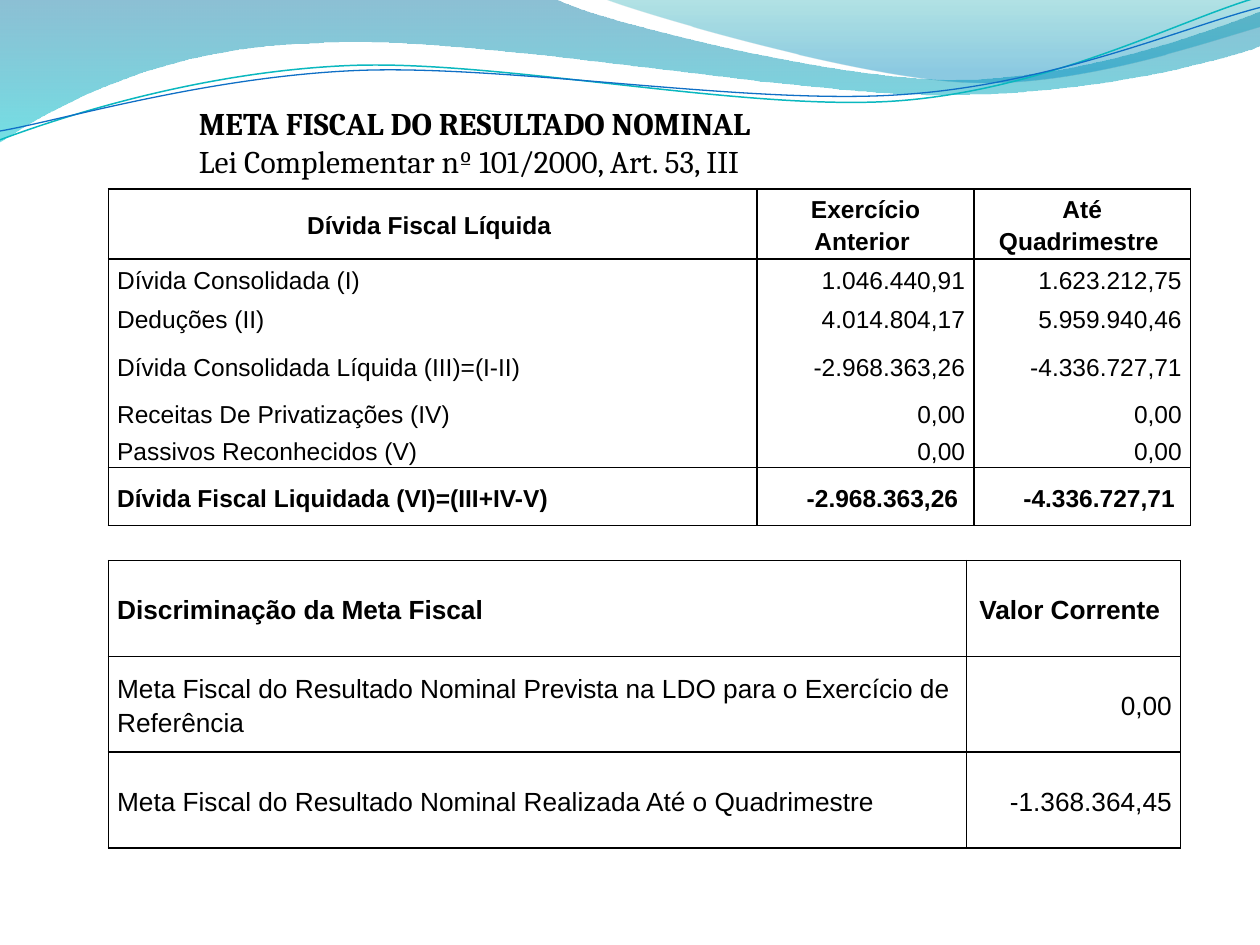
"""Build the slide on the nominal result fiscal target."""
from math import cos, radians, sin

from lxml import etree
from pptx import Presentation
from pptx.dml.color import RGBColor
from pptx.enum.text import MSO_ANCHOR, PP_ALIGN
from pptx.oxml.ns import qn
from pptx.util import Pt

LEFT, MID, RIGHT = PP_ALIGN.LEFT, PP_ALIGN.CENTER, PP_ALIGN.RIGHT
BLACK = RGBColor(0, 0, 0)
BLUE, CYAN = RGBColor(0x00, 0x74, 0xA1), RGBColor(0x00, 0xC6, 0xCF)
TEAL, SKY = RGBColor(0x00, 0xA1, 0xA9), RGBColor(0x00, 0x8B, 0xBF)
AQUA, NAVY = RGBColor(0x0A, 0xB8, 0xBF), RGBColor(0x0F, 0x6F, 0xC6)
PLAIN = "{2D5ABB26-0587-4C30-8999-92F81FD0307C}"
TILT = 2.7

deck = Presentation()
deck.slide_width, deck.slide_height = 9144000, 6858000
UNIT = deck.slide_width // 10
slide = deck.slides.add_slide(deck.slide_layouts[6])
shapes = slide.shapes


def trace(parts, close, tilt=0, hub=(0, 0)):
    """Draw an outline from points (2 numbers) and curves (6 numbers)."""
    turn = radians(tilt)
    dots = []
    for part in parts:
        for x, y in zip(part[::2], part[1::2]):
            x, y = x - hub[0], y - hub[1]
            dots.append((int((hub[0] + x * cos(turn) - y * sin(turn)) * UNIT),
                         int((hub[1] + x * sin(turn) + y * cos(turn)) * UNIT)))
    pen = shapes.build_freeform(*dots[0], scale=1.0)
    pen.add_line_segments(dots[1:], close=close)
    shape = pen.convert_to_shape()
    shape.shadow.inherit = False
    shape.rotation = -tilt
    lines = iter(list(shape._element.iter(qn("a:lnTo"))))
    for part in parts[1:]:
        first = next(lines)
        if len(part) == 6:
            curve = etree.Element(qn("a:cubicBezTo"))
            first.addprevious(curve)
            for line in (first, next(lines), next(lines)):
                curve.append(line[0])
                line.getparent().remove(line)
    return shape


def style(para, text, align, looks):
    """Fill a paragraph with one formatted run."""
    para.alignment = align
    run = para.add_run()
    run.text = text
    run.font.color.rgb = BLACK
    for key, value in looks.items():
        setattr(run.font, key, value)


waves = [
    ([(0, 0), (4.4, -0.01), (4.76, 0.17, 6.64, 0.63, 7.58, 0.63),
      (8.53, 0.63, 9.58, 0.26, 10, 0.09), (10.01, 0.36),
      (9.83, 0.44, 8.7, 0.76, 7.46, 0.75), (6.22, 0.75, 3.82, 0.28, 2.57, 0.34),
      (1.29, 0.36, 0.46, 0.83, -0.01, 1.13), (0, 0)],
     [(0, BLUE, 45), (1, CYAN, 55)]),
    ([(4.79, -0.01), (5.09, 0.11, 6.82, 0.62, 7.69, 0.65),
      (8.56, 0.69, 9.61, 0.32, 10, 0.21), (10, 0), (4.79, -0.01)],
     [(0, TEAL, 30), (0.8, SKY, 45)]),
]
for parts, stops in waves:
    wave = trace(parts, True)
    wave.line.fill.background()
    wave.fill.gradient()
    wave.fill.gradient_angle = 270
    for stop, (place, color, alpha) in zip(wave.fill.gradient_stops, stops):
        stop.position = place
        stop.color.rgb = color
    tints = wave._element.spPr.iter(qn("a:srgbClr"))
    for tint, (place, color, alpha) in zip(tints, stops):
        etree.SubElement(tint, qn("a:alpha"), val=str(alpha * 1000))

threads = [
    ([(0, 1.11), (0.48, 0.93, 1.58, 0.57, 2.77, 0.52),
      (3.95, 0.47, 5.93, 0.89, 7.13, 0.8), (8.33, 0.71, 9.38, 0.15, 9.98, -0.02)],
     (4.99, 0.58), AQUA, 0.85),
    ([(0, 1.04), (0.47, 0.96, 1.64, 0.61, 2.83, 0.56),
      (4.03, 0.51, 5.97, 0.84, 7.17, 0.75), (8.36, 0.67, 9.41, 0.21, 10, 0.06)],
     (5, 0.59), NAVY, 0.75),
]
for parts, hub, color, width in threads:
    thread = trace(parts, False, TILT, hub)
    thread.fill.background()
    thread.line.color.rgb = color
    thread.line.width = Pt(width)

box = [int(n * UNIT) for n in (1.48, 0.78, 6.72, 0.71)]
frame = shapes.add_textbox(*box).text_frame
frame.word_wrap = True
titles = "META FISCAL DO RESULTADO NOMINAL", "Lei Complementar nº 101/2000, Art. 53, III"
for para, text, bold in zip((frame.paragraphs[0], frame.add_paragraph()), titles, (True, False)):
    style(para, text, LEFT, {"name": "Cambria", "size": Pt(18), "bold": bold})

debt = [
    ("Dívida Fiscal Líquida ", "Exercício Anterior ", "Até Quadrimestre "),
    ("Dívida Consolidada (I)", "1.046.440,91", "1.623.212,75"),
    ("Deduções (II)", "4.014.804,17", "5.959.940,46"),
    ("Dívida Consolidada Líquida (III)=(I-II)", "-2.968.363,26", "-4.336.727,71"),
    ("Receitas De Privatizações (IV)", "0,00", "0,00"),
    ("Passivos Reconhecidos (V)", "0,00", "0,00"),
    ("Dívida Fiscal Liquidada (VI)=(III+IV-V)", "-2.968.363,26 ", "-4.336.727,71 "),
]
goal = [
    ("Discriminação da Meta Fiscal", "Valor Corrente "),
    ("Meta Fiscal do Resultado Nominal Prevista na LDO para o Exercício de Referência", "0,00"),
    ("Meta Fiscal do Resultado Nominal Realizada Até o Quadrimestre", "-1.368.364,45"),
]
grids = [
    (debt, 1.5, (5.15, 1.72, 1.72), (0.46, 0.31, 0.31, 0.46, 0.21, 0.21, 0.46),
     14, MID, {0, 1, 6, 7}, {0, 6}),
    (goal, 4.45, (6.81, 1.7), (0.76,) * 3, 15, LEFT, {0, 1, 2, 3}, {0}),
]
inset = {"margin_left": 0.07, "margin_right": 0.07, "margin_top": 0.01, "margin_bottom": 0.01}
for data, top, cols, rows, size, lead, rules, heavy in grids:
    box = [int(n * UNIT) for n in (0.86, top, sum(cols), sum(rows))]
    table = shapes.add_table(len(rows), len(cols), *box).table
    table.first_row = table.horz_banding = False
    table._tbl.tblPr.find(qn("a:tableStyleId")).text = PLAIN
    for col, width in zip(table.columns, cols):
        col.width = int(width * UNIT)
    for r, (row, height) in enumerate(zip(table.rows, rows)):
        row.height = int(height * UNIT)
        sides = {"lnL": True, "lnR": True, "lnT": r in rules, "lnB": r + 1 in rules}
        for c, (cell, text) in enumerate(zip(row.cells, data[r])):
            for key, value in inset.items():
                setattr(cell, key, int(value * UNIT))
            cell.vertical_anchor = MSO_ANCHOR.MIDDLE
            for side, shown in sides.items():
                edge = etree.SubElement(cell._tc.get_or_add_tcPr(), qn("a:" + side), w=str(Pt(1)))
                ink = etree.SubElement(edge, qn("a:solidFill" if shown else "a:noFill"))
                if shown:
                    etree.SubElement(ink, qn("a:srgbClr"), val=str(BLACK))
            cell.fill.background()
            para = cell.text_frame.paragraphs[0]
            para.line_spacing = 1.15
            align = (lead if r == 0 else LEFT) if c == 0 else (MID if r == 0 else RIGHT)
            style(para, text, align, {"name": "Arial", "size": Pt(size), "bold": r in heavy})

deck.save("out.pptx")
